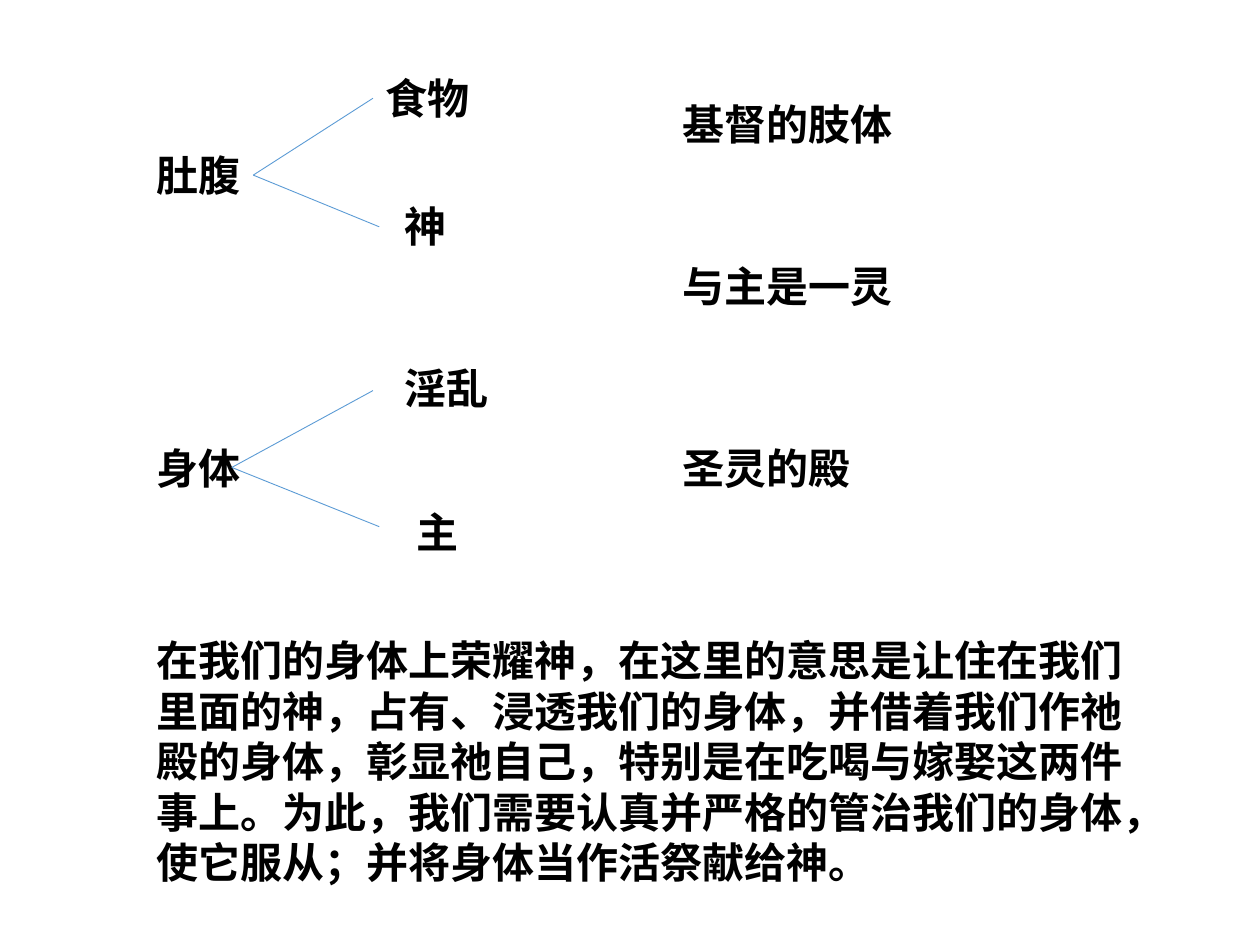
import pptx
import pptx.dml.color
import pptx.enum.shapes
import pptx.enum.text
import pptx.oxml
import pptx.util
from pptx.util import Inches

BLACK = pptx.dml.color.RGBColor(0x00, 0x00, 0x00)
BLUE = pptx.dml.color.RGBColor(0x5B, 0x9B, 0xD5)
FONT = "Calibri"
LINE_HEIGHT = 0.5

EXPLANATION = (
    "在我们的身体上荣耀神，在这里的意思是让住在我们里面的神，占有、浸透我们的身体，"
    "并借着我们作祂殿的身体，彰显祂自己，特别是在吃喝与嫁娶这两件事上。"
    "为此，我们需要认真并严格的管治我们的身体，使它服从；并将身体当作活祭献给神。"
)


def add_text(s, text, left, top, width, height=LINE_HEIGHT, wrap=True):
    box = s.shapes.add_textbox(Inches(left), Inches(top), Inches(width), Inches(height))
    tf = box.text_frame
    tf.text = text
    tf.word_wrap = wrap
    tf.auto_size = pptx.enum.text.MSO_AUTO_SIZE.SHAPE_TO_FIT_TEXT
    font = tf.paragraphs[0].runs[0].font
    font.name = FONT
    font.size = pptx.util.Pt(24)
    font.bold = True
    font.color.rgb = BLACK


def add_label(s, text, left, top):
    # One third of an inch per character, plus the side insets
    add_text(s, text, left, top, 0.21 + len(text) / 3, wrap=False)


def add_line(s, start, end):
    line = s.shapes.add_connector(
        pptx.enum.shapes.MSO_CONNECTOR.STRAIGHT, *map(Inches, start + end))
    line.line.color.rgb = BLUE
    line.line.width = pptx.util.Pt(0.5)
    sp_pr = line._element.spPr
    sp_pr.append(pptx.oxml.parse_xml(
        '<a:effectLst xmlns:a="http://schemas.openxmlformats.org/drawingml/2006/main"/>'))


def add_fork(s, left, top, root, fork, branches):
    """Root label with branches; all offsets are from the box's left and top."""
    text, root_y = root
    add_label(s, text, left, top + root_y)
    for text, label_x, label_y, end_x, end_y in branches:
        add_label(s, text, left + label_x, top + label_y)
        add_line(s, (left + fork[0], top + fork[1]), (left + end_x, top + end_y))


def add_phrases(s, left, top, width, phrases):
    for text, y in phrases:
        add_text(s, text, left, top + y, width)


def main():
    prs = pptx.Presentation()
    prs.slide_width, prs.slide_height = Inches(10), Inches(7.5)
    s = prs.slides.add_slide(prs.slide_layouts[6])

    # Left: two forks
    add_fork(s, 1.14, 0.53, ("肚腹", 0.61), (0.87, 0.86), [
        ("食物", 1.82, 0, 1.82, 0.25),
        ("神", 1.97, 1.01, 1.87, 1.27),
    ])
    add_fork(s, 1.14, 2.83, ("身体", 0.63), (0.7, 0.88), [
        ("淫乱", 1.97, 0, 1.82, 0.27),
        ("主", 2.07, 1.14, 1.87, 1.35),
    ])

    # Right: what the body is
    add_phrases(s, 5.32, 0.73, 2.78, [
        ("基督的肢体", 0),
        ("与主是一灵", 1.29),
        ("圣灵的殿", 2.73),
    ])

    # Bottom: explanation
    add_text(s, EXPLANATION, 1.14, 4.99, 8.05, 2.12)

    prs.save("out.pptx")


if __name__ == "__main__":
    main()
